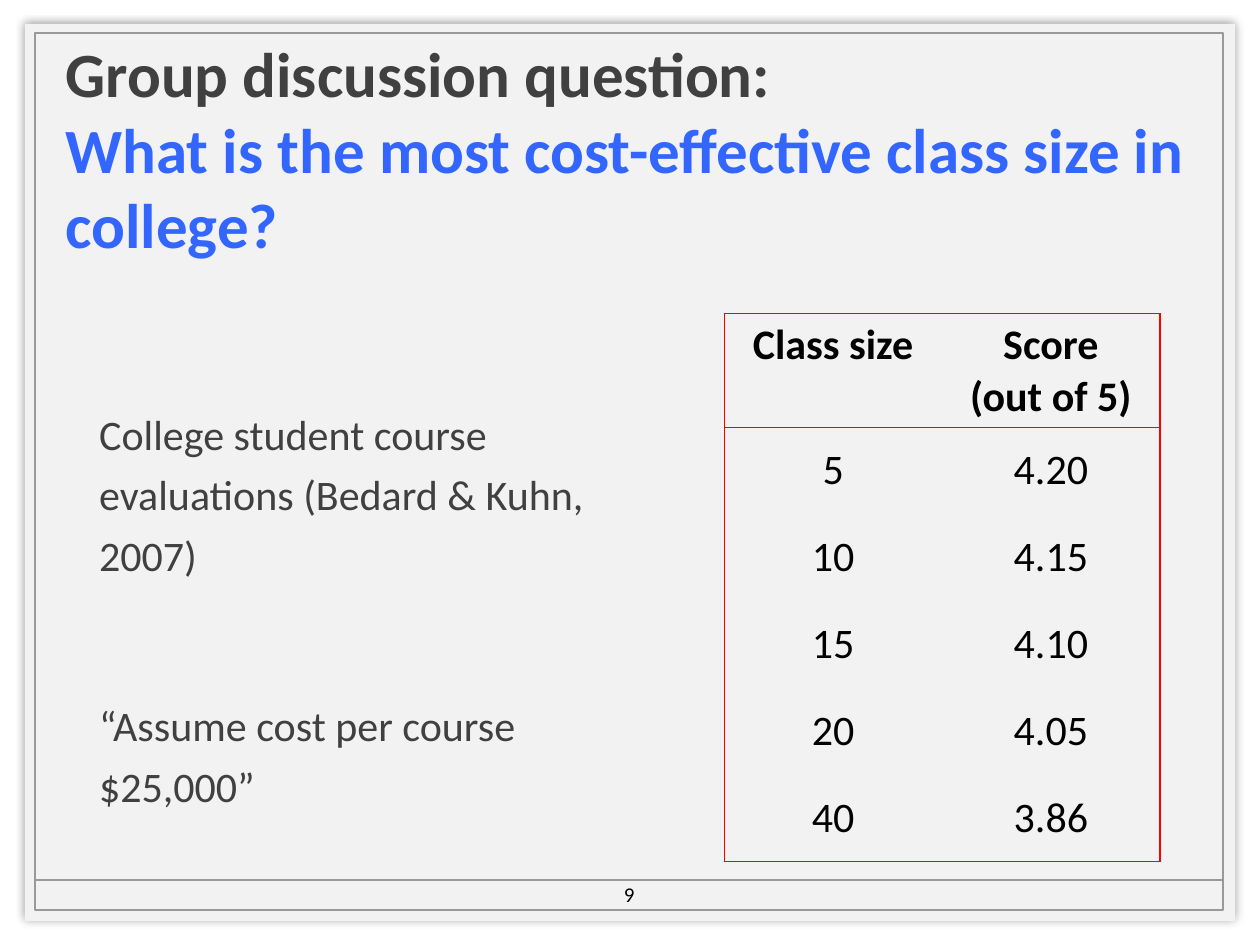
import pptx
import pptx.util
import pptx.dml.color
import pptx.enum.shapes
import pptx.enum.text
import pptx.oxml
import pptx.oxml.ns

Cm = pptx.util.Cm
Pt = pptx.util.Pt
RGBColor = pptx.dml.color.RGBColor
ANCHOR = pptx.enum.text.MSO_ANCHOR
ALIGN = pptx.enum.text.PP_ALIGN
RECTANGLE = pptx.enum.shapes.MSO_SHAPE.RECTANGLE

PANEL = RGBColor(0xF2, 0xF2, 0xF2)
FRAME = RGBColor(0x99, 0x99, 0x99)
DARK = RGBColor(0x40, 0x40, 0x40)
BLUE = RGBColor(0x33, 0x66, 0xFF)
BLACK = RGBColor(0, 0, 0)
RED = RGBColor(0xFF, 0, 0)
NAMESPACE = pptx.oxml.ns.nsdecls("a")


def add_span(para, text, size, color, bold=False):
    span = para.add_run()
    span.text = text
    font_format = {"name": "Calibri", "size": Pt(size), "bold": bold}
    for name, value in font_format.items():
        setattr(span.font, name, value)
    span.font.color.rgb = color


def add_text_box(left, top, width, height, anchor):
    box = slide.shapes.add_textbox(Cm(left), Cm(top), Cm(width), Cm(height))
    box.text_frame.word_wrap = True
    box.text_frame.vertical_anchor = anchor
    return box.text_frame


deck = pptx.Presentation()
deck.slide_width = Cm(25.4)
deck.slide_height = Cm(19.05)
slide = deck.slides.add_slide(deck.slide_layouts[6])

# Panel with a soft shadow, and the thin frame inside it
panel = slide.shapes.add_shape(RECTANGLE, Cm(0.5), Cm(0.48), Cm(24.4), Cm(18.09))
panel.fill.solid()
panel.fill.fore_color.rgb = PANEL
panel.line.fill.background()
panel._element.spPr.append(pptx.oxml.parse_xml(
    f'<a:effectLst {NAMESPACE}><a:outerShdw blurRad="{Pt(5)}" dist="0" dir="0">'
    '<a:srgbClr val="000000"><a:alpha val="40000"/></a:srgbClr>'
    '</a:outerShdw></a:effectLst>'))

frame = slide.shapes.add_shape(RECTANGLE, Cm(0.71), Cm(0.67), Cm(23.95), Cm(17.67))
frame.shadow.inherit = False
frame.fill.background()

footer_line = slide.shapes.add_connector(
    pptx.enum.shapes.MSO_CONNECTOR.STRAIGHT, Cm(0.71), Cm(17.74), Cm(24.66), Cm(17.74))
footer_line._element.spPr.append(pptx.oxml.parse_xml(f"<a:effectLst {NAMESPACE}/>"))
for outlined in (frame, footer_line):
    outlined.line.color.rgb = FRAME
    outlined.line.width = Pt(1)

# Page number
para = add_text_box(11.63, 17.65, 2.11, 0.76, ANCHOR.MIDDLE).paragraphs[0]
para.alignment = ALIGN.CENTER
add_span(para, "9", 12, BLACK)

# Title
para = add_text_box(1.07, 1.12, 23.24, 3.73, ANCHOR.MIDDLE).paragraphs[0]
add_span(para, "Group discussion question:", 36, DARK, True)
para.add_line_break()
add_span(para, "What is the most cost-effective class size in college?", 36, BLUE, True)

# Body, with a wide gap between the two statements
body = add_text_box(1.75, 7.9, 11.13, 11.15, ANCHOR.TOP)
statements = [
    ("College student course evaluations (Bedard & Kuhn, 2007)", 20),
    ("“Assume cost per course $25,000”", 63),
]
for index, (text, space) in enumerate(statements):
    para = body.add_paragraph() if index else body.paragraphs[0]
    para.line_spacing = 1.2
    para.space_before = Pt(space)
    add_span(para, text, 24, DARK)

# Scores by class size
scores = [
    ("Class size", "Score\n(out of 5)"),
    ("5", "4.20"),
    ("10", "4.15"),
    ("15", "4.10"),
    ("20", "4.05"),
    ("40", "3.86"),
]
last_row = len(scores) - 1
table = slide.shapes.add_table(
    len(scores), 2, Cm(14.6), Cm(6.32), Cm(8.78), Cm(11.04)).table
table.first_row = False
table.horz_banding = False
for column in table.columns:
    column.width = Cm(4.39)
for row_index, row_texts in enumerate(scores):
    is_header = row_index == 0
    table.rows[row_index].height = Cm(2.29 if is_header else 1.75)
    for column_index, text in enumerate(row_texts):
        cell = table.cell(row_index, column_index)
        cell_format = {
            "margin_left": Cm(0.15), "margin_right": Cm(0.15),
            "margin_top": Cm(0.13), "margin_bottom": Cm(0.13),
            "vertical_anchor": ANCHOR.TOP if is_header else ANCHOR.MIDDLE,
        }
        for name, value in cell_format.items():
            setattr(cell, name, value)
        borders = {
            "lnL": column_index == 0,
            "lnR": column_index == 1,
            "lnT": row_index <= 1,
            "lnB": row_index in (0, last_row),
        }
        properties = cell._tc.get_or_add_tcPr()
        for tag, visible in borders.items():
            paint = (f'<a:solidFill><a:srgbClr val="{RED}"/></a:solidFill>'
                     if visible else "<a:noFill/>")
            properties.append(pptx.oxml.parse_xml(
                f'<a:{tag} {NAMESPACE} w="{Pt(1)}">{paint}</a:{tag}>'))
        cell.fill.background()
        for index, line in enumerate(text.split("\n")):
            para = cell.text_frame.add_paragraph() if index else cell.text_frame.paragraphs[0]
            para.alignment = ALIGN.CENTER
            add_span(para, line, 24, BLACK, is_header)

deck.save("out.pptx")
